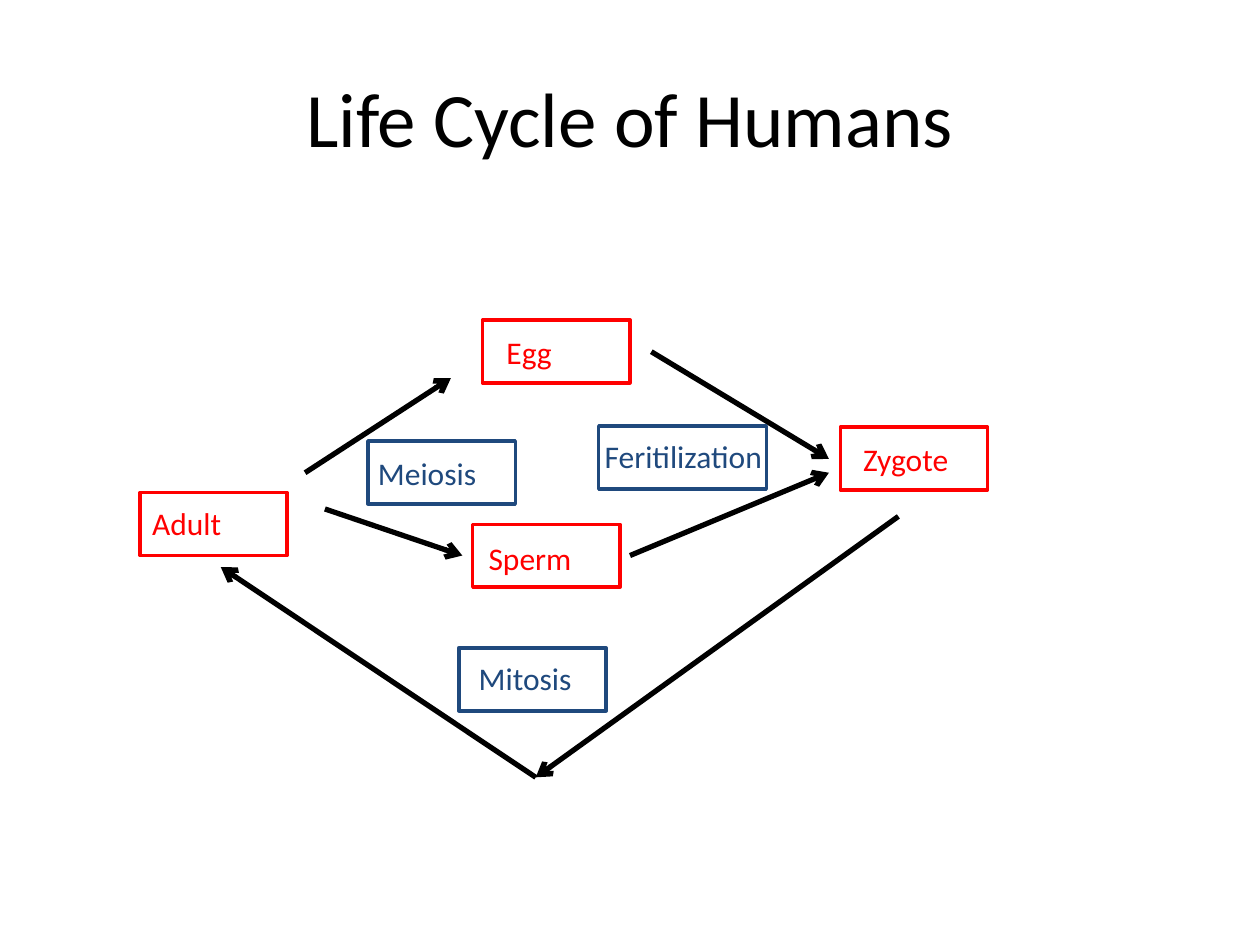
"""Build the slide showing the human life cycle as boxes joined by arrows."""
from lxml.etree import SubElement
from pptx import Presentation
from pptx.dml.color import RGBColor
from pptx.enum.shapes import MSO_CONNECTOR, MSO_SHAPE
from pptx.enum.text import MSO_ANCHOR, PP_ALIGN
from pptx.oxml.ns import qn
from pptx.util import Cm, Pt

RED = RGBColor(0xFF, 0x00, 0x00)
NAVY = RGBColor(0x1F, 0x49, 0x7D)
BLACK = RGBColor(0x00, 0x00, 0x00)
WHITE = RGBColor(0xFF, 0xFF, 0xFF)
FONT = "Calibri"

TITLE = "Life Cycle of Humans"
BOX_WIDTH, BOX_HEIGHT = 2.97, 1.27
LABEL_WIDTH, LABEL_HEIGHT = 3.81, 1.02

# (name, colour, box corner, box width, label corner)
STEPS = [
    ("Zygote", RED, (16.94, 8.61), BOX_WIDTH, (17.15, 8.74)),
    ("Sperm", RED, (9.53, 10.57), BOX_WIDTH, (9.6, 10.74)),
    ("Egg", RED, (9.73, 6.45), BOX_WIDTH, (9.96, 6.58)),
    ("Adult", RED, (2.82, 9.93), BOX_WIDTH, (2.82, 10.03)),
    ("Meiosis", NAVY, (7.42, 8.89), BOX_WIDTH, (7.37, 9.02)),
    ("Mitosis", NAVY, (9.25, 13.06), BOX_WIDTH, (9.4, 13.16)),
]
FERTILIZATION = ("Feritilization", NAVY, (12.07, 8.59), 3.38, (11.94, 8.69))

LOWEST_POINT = (10.8, 15.67)
ARROWS = [
    ((6.15, 9.53), (9.09, 7.62)),
    ((6.55, 10.26), (9.32, 11.2)),
    ((13.13, 7.09), (16.71, 9.25)),
    ((12.7, 11.2), (16.71, 9.53)),
    ((18.11, 10.41), LOWEST_POINT),
    (LOWEST_POINT, (4.45, 11.43)),
]


def add_text(slide, text, corner, width, height, size, color):
    textbox = slide.shapes.add_textbox(*map(Cm, (*corner, width, height)))
    frame = textbox.text_frame
    frame.word_wrap = True
    run = frame.paragraphs[0].add_run()
    run.text = text
    run.font.name = FONT
    run.font.size = Pt(size)
    run.font.color.rgb = color
    return frame


def add_step(slide, name, color, corner, width, label_corner):
    box = slide.shapes.add_shape(
        MSO_SHAPE.RECTANGLE, *map(Cm, (*corner, width, BOX_HEIGHT)))
    box.shadow.inherit = False
    box.fill.solid()
    box.fill.fore_color.rgb = WHITE
    box.line.color.rgb = color
    box.line.width = Pt(2)
    add_text(slide, name, label_corner, LABEL_WIDTH, LABEL_HEIGHT, 18, color)


def add_arrow(slide, start, end):
    arrow = slide.shapes.add_connector(
        MSO_CONNECTOR.STRAIGHT, *map(Cm, (*start, *end)))
    arrow.line.color.rgb = BLACK
    arrow.line.width = Pt(3)
    properties = arrow.element.spPr
    SubElement(properties.find(qn("a:ln")), qn("a:tailEnd"), type="arrow")
    SubElement(properties, qn("a:effectLst"))


def main():
    presentation = Presentation()
    presentation.slide_width, presentation.slide_height = Cm(25.4), Cm(19.05)
    slide = presentation.slides.add_slide(presentation.slide_layouts[6])

    title = add_text(slide, TITLE, (1.27, 0.76), 22.86, 3.18, 44, BLACK)
    title.vertical_anchor = MSO_ANCHOR.MIDDLE
    title.paragraphs[0].alignment = PP_ALIGN.CENTER

    for step in STEPS:
        add_step(slide, *step)
    for start, end in ARROWS:
        add_arrow(slide, start, end)
    add_step(slide, *FERTILIZATION)

    presentation.save("out.pptx")


if __name__ == "__main__":
    main()
